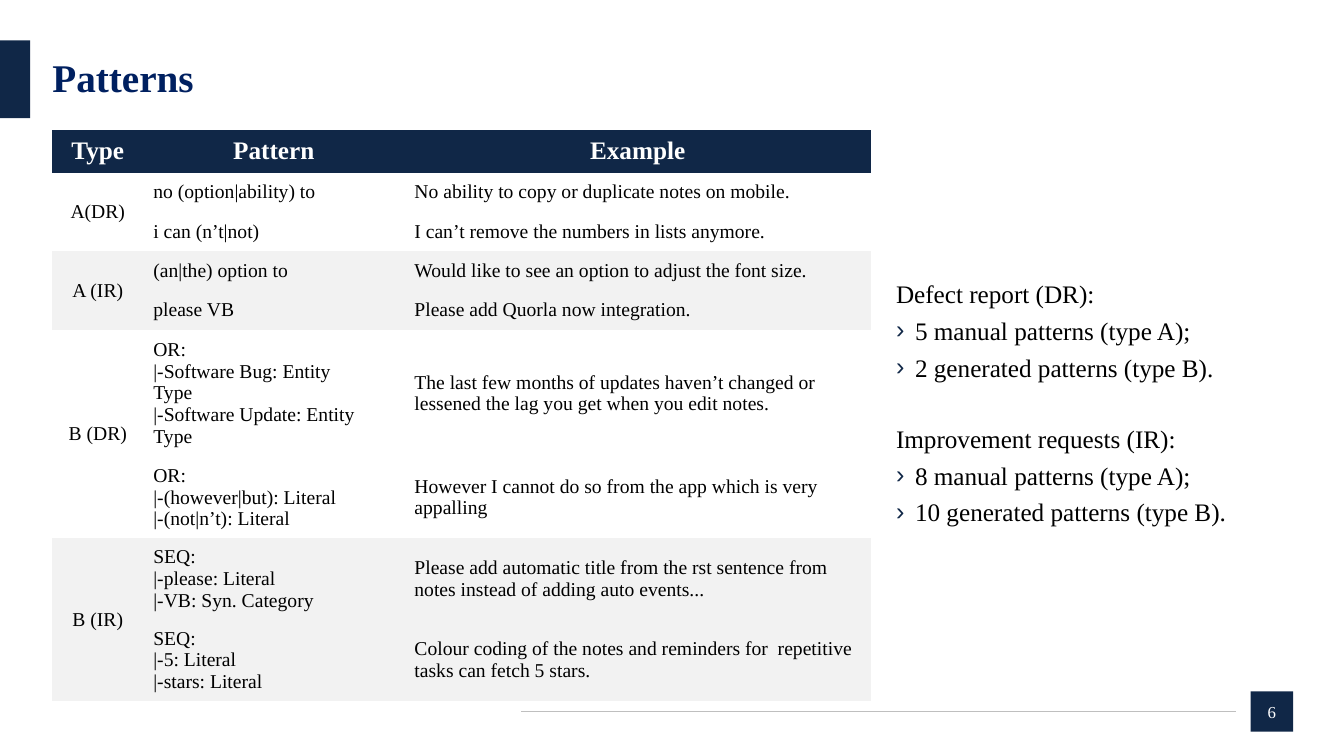
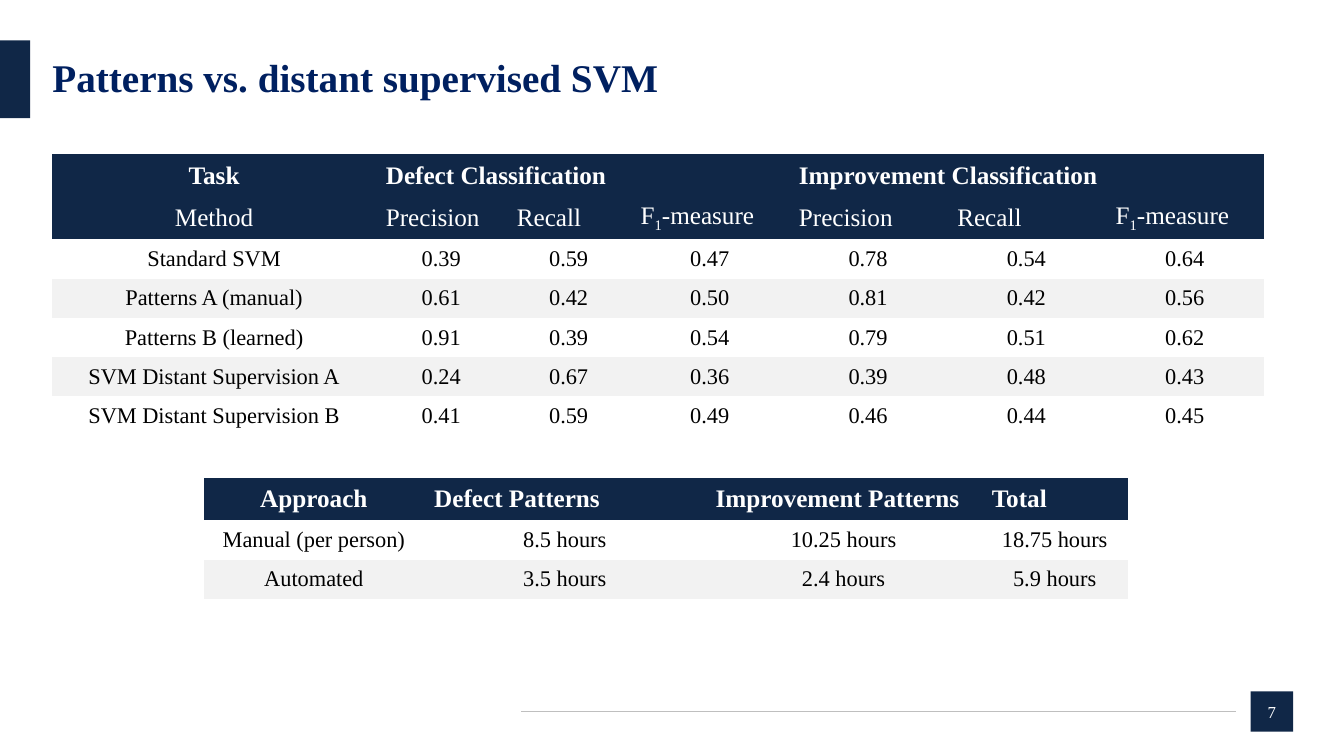
import pptx
import pptx.dml.color
import pptx.enum.shapes
import pptx.enum.text
import pptx.oxml.ns
import pptx.util
from lxml import etree

Cm, Pt = pptx.util.Cm, pptx.util.Pt
LEFT = pptx.enum.text.PP_ALIGN.LEFT
CENTER = pptx.enum.text.PP_ALIGN.CENTER
MIDDLE = pptx.enum.text.MSO_ANCHOR.MIDDLE

# Shared look
FONT = "Times New Roman"
NAVY, TITLE_BLUE, RULE_GREY = "102747", "002060", "BFBFBF"
WHITE, BLACK, STRIPE = "FFFFFF", "000000", "F2F2F2"
MARGIN = 1.32
BAND_TOP, BAND_HEIGHT = 1.02, 1.96
HEADER_ROW, BODY_ROW = 1.07, 0.99
NO_GRID_STYLE = "{2D5ABB26-0587-4C30-8999-92F81FD0307C}"


def color(value):
    return pptx.dml.color.RGBColor.from_string(value)


def paint(part, value):
    part.fill.solid()
    part.fill.fore_color.rgb = color(value)


def box(left, top, width, height):
    return Cm(left), Cm(top), Cm(width), Cm(height)


def place(shape, *bounds):
    shape.left, shape.top, shape.width, shape.height = box(*bounds)


def write(frame, text, size=18, ink=BLACK, bold=False, align=LEFT,
          line_spacing=None, before=0, after=0):
    """Write one paragraph per line; text between tildes is subscript."""
    paragraphs = []
    for number, line in enumerate(text.split("\n")):
        paragraph = frame.add_paragraph() if number else frame.paragraphs[0]
        paragraph.alignment = align
        paragraph.line_spacing = line_spacing
        paragraph.space_before, paragraph.space_after = Pt(before), Pt(after)
        for order, piece in enumerate(line.split("~")):
            run = paragraph.add_run()
            run.text = piece
            run.font.name, run.font.size = FONT, Pt(size)
            run.font.bold, run.font.color.rgb = bold, color(ink)
            if order % 2:
                run.font._element.set("baseline", "-25000")
        paragraphs.append(paragraph)
    return paragraphs


def set_bullet(paragraph, char=None, indent=0.0):
    props = paragraph._p.get_or_add_pPr()
    props.set("marL", str(Cm(indent)))
    props.set("indent", str(-Cm(indent)))
    qn = pptx.oxml.ns.qn
    if char is None:
        etree.SubElement(props, qn("a:buNone"))
        return
    bullet_color = etree.SubElement(props, qn("a:buClr"))
    etree.SubElement(bullet_color, qn("a:srgbClr"), val=NAVY)
    etree.SubElement(props, qn("a:buChar"), char=char)


def clear_insets(frame):
    frame.margin_left = frame.margin_right = 0
    frame.margin_top = frame.margin_bottom = 0
    frame.word_wrap = True
    frame.auto_size = pptx.enum.text.MSO_AUTO_SIZE.NONE


def add_block(slide, *bounds):
    block = slide.shapes.add_shape(
        pptx.enum.shapes.MSO_SHAPE.RECTANGLE, *box(*bounds))
    block.shadow.inherit = False
    paint(block, NAVY)
    block.line.fill.background()
    return block


def add_page(deck, layout, title, number):
    """Slide with title, side band, footer rule and page number."""
    slide = deck.slides.add_slide(deck.slide_layouts[layout])

    # Title and side band
    heading = slide.shapes.title
    place(heading, MARGIN, BAND_TOP, 31.27, BAND_HEIGHT)
    clear_insets(heading.text_frame)
    heading.text_frame.vertical_anchor = MIDDLE
    write(heading.text_frame, title, size=28, ink=TITLE_BLUE, bold=True,
          line_spacing=0.9)
    add_block(slide, 0, BAND_TOP, 0.76, BAND_HEIGHT)

    # Footer
    page_number = add_block(slide, 31.52, 17.42, 1.07, 1.02).text_frame
    page_number.margin_left = page_number.margin_right = 0
    page_number.vertical_anchor = MIDDLE
    write(page_number, str(number), size=12, ink=WHITE, align=CENTER)
    rule = slide.shapes.add_connector(
        pptx.enum.shapes.MSO_CONNECTOR.STRAIGHT,
        Cm(13.13), Cm(17.93), Cm(31.14), Cm(17.93))
    rule.line.color.rgb, rule.line.width = color(RULE_GREY), Pt(0.5)
    etree.SubElement(rule._element.spPr, pptx.oxml.ns.qn("a:effectLst"))
    return slide


def add_grid(slide, left, top, widths, heights, rows, merges=(), headers=1,
             stripe=1, size=16, header_align=LEFT, body_align=CENTER):
    """Table whose first column is centred; stripe is rows per band."""
    table = slide.shapes.add_table(
        len(rows), len(widths),
        *box(left, top, sum(widths), sum(heights))).table
    table.first_row = table.horz_banding = False
    table._tbl.tblPr.find(pptx.oxml.ns.qn("a:tableStyleId")).text = NO_GRID_STYLE
    for column, width in zip(table.columns, widths):
        column.width = Cm(width)
    for row, height in zip(table.rows, heights):
        row.height = Cm(height)

    for r, row in enumerate(rows):
        is_header = r < headers
        band = (WHITE, STRIPE)[(r - headers) // stripe % 2]
        for c, text in enumerate(row):
            cell = table.cell(r, c)
            paint(cell, NAVY if is_header else band)
            cell.vertical_anchor = MIDDLE
            if text:
                rest = header_align if is_header else body_align
                write(cell.text_frame, text, size=18 if is_header else size,
                      ink=WHITE if is_header else BLACK, bold=r == 0,
                      align=rest if c else CENTER)
    for first, last in merges:
        table.cell(*first).merge(table.cell(*last))


def add_summary(slide, groups, *bounds):
    """Headed bullet lists in the body placeholder."""
    body = slide.placeholders[1]
    place(body, *bounds)
    frame = body.text_frame
    clear_insets(frame)
    for order, (heading, items) in enumerate(groups):
        target = frame
        lines = "\n".join([heading] + items)
        for number, line in enumerate(lines.split("\n")):
            is_first = order == 0 and number == 0
            if not is_first:
                frame.add_paragraph()
            paragraph = frame.paragraphs[-1]
            write_line(paragraph, line, before=24.6 if order and not number else 0)
            if number:
                set_bullet(paragraph, "›", 0.48)
            else:
                set_bullet(paragraph)


def write_line(paragraph, text, before):
    """Write one list line into a paragraph that already stands."""
    holder = LineHolder(paragraph)
    write(holder, text, before=before, after=4.7)


class LineHolder:
    """Presents a single paragraph the way a text frame does."""

    def __init__(self, paragraph):
        self.paragraphs = [paragraph]


PATTERN_ROWS = [
    ("Type", "Pattern", "Example"),
    ("A(DR)", "no (option|ability) to",
     "No ability to copy or duplicate notes on mobile."),
    ("", "i can (n’t|not)", "I can’t remove the numbers in lists anymore."),
    ("A (IR)", "(an|the) option to",
     "Would like to see an option to adjust the font size."),
    ("", "please VB", "Please add Quorla now integration."),
    ("B (DR)", "OR:\n|-Software Bug: Entity\nType\n"
     "|-Software Update: Entity\nType",
     "The last few months of updates haven’t changed or lessened the lag "
     "you get when you edit notes."),
    ("", "OR:\n|-(however|but): Literal\n|-(not|n’t): Literal",
     "However I cannot do so from the app which is very appalling"),
    ("B (IR)", "SEQ:\n|-please: Literal\n|-VB: Syn. Category",
     "Please add automatic title from the rst sentence from notes instead "
     "of adding auto events..."),
    ("", "SEQ:\n|-5: Literal\n|-stars: Literal",
     "Colour coding of the notes and reminders for  repetitive tasks can "
     "fetch 5 stars."),
]
SUMMARY = [
    ("Defect report (DR):",
     ["5 manual patterns (type A);", "2 generated patterns (type B)."]),
    ("Improvement requests (IR):",
     ["8 manual patterns (type A);", "10 generated patterns (type B)."]),
]
MEASURES = ("Precision", "Recall", "F~1~-measure")
SCORE_ROWS = [
    ("Task", "Defect Classification", "", "",
     "Improvement Classification", "", ""),
    ("Method",) + MEASURES * 2,
    ("Standard SVM", "0.39", "0.59", "0.47", "0.78", "0.54", "0.64"),
    ("Patterns A (manual)", "0.61", "0.42", "0.50", "0.81", "0.42", "0.56"),
    ("Patterns B (learned)", "0.91", "0.39", "0.54", "0.79", "0.51", "0.62"),
    ("SVM Distant Supervision A",
     "0.24", "0.67", "0.36", "0.39", "0.48", "0.43"),
    ("SVM Distant Supervision B",
     "0.41", "0.59", "0.49", "0.46", "0.44", "0.45"),
]
EFFORT_ROWS = [
    ("Approach", "Defect Patterns", "Improvement Patterns", "Total"),
    ("Manual (per person)", "8.5 hours", "10.25 hours", "18.75 hours"),
    ("Automated", "3.5 hours", "2.4 hours", "5.9 hours"),
]


def build_patterns(deck):
    slide = add_page(deck, 1, "Patterns", 6)
    add_summary(slide, SUMMARY, 22.58, 7.01, 10.26, 6.91)
    add_grid(slide, MARGIN, 3.28, [2.29, 6.58, 11.76],
             [HEADER_ROW] + [BODY_ROW] * 4 + [3.2] + [2.05] * 3,
             PATTERN_ROWS,
             merges=[((r, 0), (r + 1, 0)) for r in range(1, 9, 2)],
             stripe=2, size=14, header_align=CENTER, body_align=LEFT)


def build_comparison(deck):
    slide = add_page(deck, 5, "Patterns vs. distant supervised SVM", 7)
    add_grid(slide, MARGIN, 3.89, [8.15, 3.3, 3.12] + [3.99] * 4,
             [HEADER_ROW] * 2 + [BODY_ROW] * 5, SCORE_ROWS,
             merges=[((0, c), (0, c + 2)) for c in (1, 4)], headers=2)
    add_grid(slide, 5.13, 12.04, [5.56, 7.09, 6.96, 3.68],
             [HEADER_ROW] + [BODY_ROW] * 2, EFFORT_ROWS)


def main():
    deck = pptx.Presentation()
    deck.slide_width, deck.slide_height = Cm(33.87), Cm(19.05)
    build_patterns(deck)
    build_comparison(deck)
    deck.save("out.pptx")


if __name__ == "__main__":
    main()
